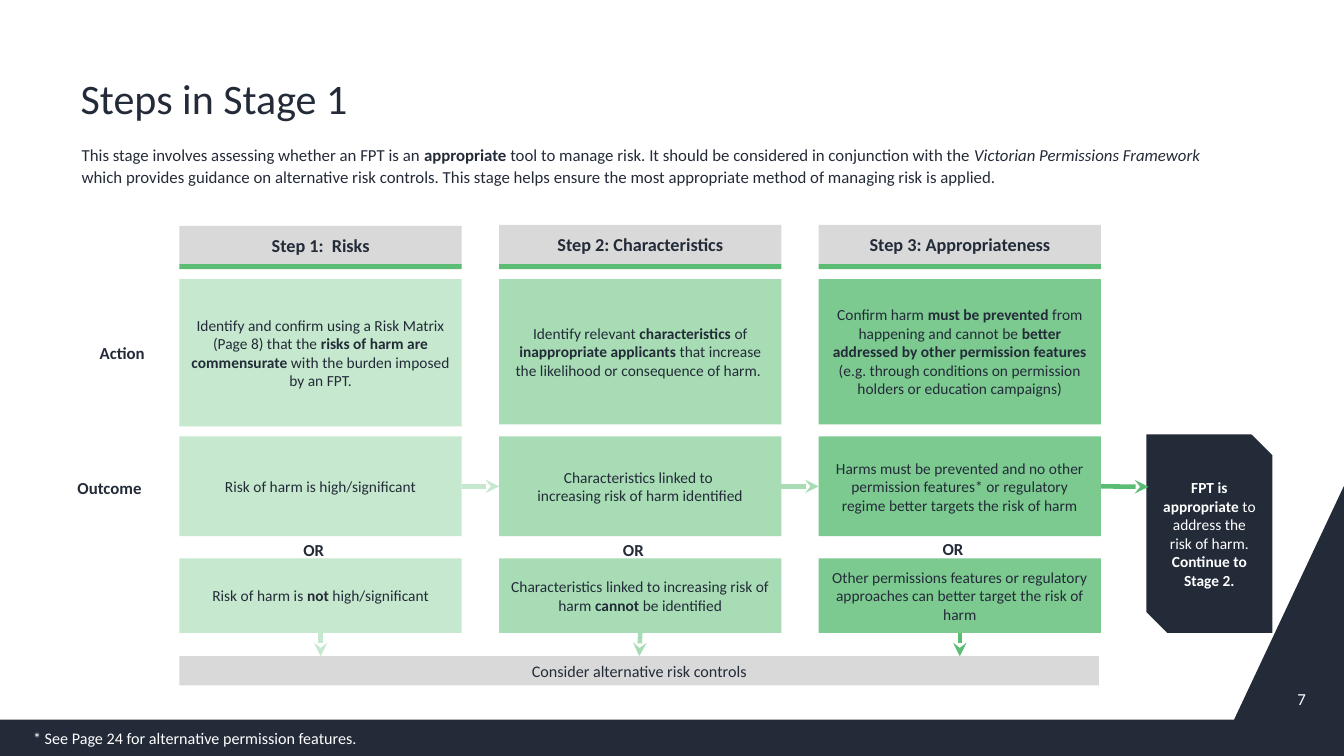
from lxml import etree
from pptx import Presentation
from pptx.dml.color import RGBColor
from pptx.enum.shapes import MSO_CONNECTOR, MSO_SHAPE
from pptx.enum.text import MSO_ANCHOR, MSO_AUTO_SIZE, PP_ALIGN
from pptx.oxml.ns import qn
from pptx.util import Inches, Pt

FONT = "Calibri"
COLORS = {
    "navy": "232B39", "white": "FFFFFF", "grey": "D9D9D9", "green": "5BBD74",
    "pale": "C6E8CE", "light": "A7DCB4", "medium": "7CCA90",
}
COLUMN_LEFT, COLUMN_PITCH, COLUMN_WIDTH = 1.78, 3.17, 2.8
ACTION_TOP, OUTCOME_TOP, ALTERNATIVE_TOP = 2.77, 4.33, 5.54

# Text is a list of spans; a span is (words, style), style "b" or "i" or ""
STEPS = [
    {
        "title": "Step 1:  Risks", "title_top": 2.24, "or_top": 5.31,
        "fill": "pale", "arrow": "pale", "action_height": 1.46,
        "action": [("Identify and confirm using a Risk Matrix (Page 8) that the ", ""),
                   ("risks of harm are commensurate ", "b"),
                   ("with the burden imposed by an FPT.", "")],
        "outcome": [("Risk of harm is high/significant", "")],
        "alternative": [("Risk of harm is ", ""), ("not", "b"), (" high/significant", "")],
    },
    {
        "title": "Step 2: Characteristics", "title_top": 2.23, "or_top": 5.31,
        "fill": "light", "arrow": "light", "action_height": 1.44,
        "action": [("Identify relevant ", ""), ("characteristics", "b"), (" of ", ""),
                   ("inappropriate applicants", "b"),
                   (" that increase the likelihood or consequence of harm. ", "")],
        "outcome": [("Characteristics linked to \nincreasing risk of harm identified", "")],
        "alternative": [("Characteristics linked to increasing risk of harm ", ""),
                        ("cannot ", "b"), ("be identified", "")],
    },
    {
        "title": "Step 3: Appropriateness", "title_top": 2.23, "or_top": 5.3,
        "fill": "medium", "arrow": "green", "action_height": 1.44,
        "action": [("Confirm harm ", ""), ("must be prevented ", "b"),
                   ("from happening and cannot be ", ""),
                   ("better addressed by other permission features ", "b"),
                   ("(e.g. through conditions on permission holders or education campaigns)", "")],
        "outcome": [("Harms must be prevented and no other permission features* or "
                     "regulatory regime better targets the risk of harm", "")],
        "alternative": [("Other permissions features or regulatory approaches can better "
                         "target the risk of harm", "")],
    },
]
INTRO = [
    ("This stage involves assessing whether an FPT is an ", ""), ("appropriate ", "b"),
    ("tool to manage risk. It should be considered in conjunction with the ", ""),
    ("Victorian Permissions Framework ", "i"),
    ("which provides guidance on alternative risk controls. This stage helps ensure "
     "the most appropriate method of managing risk is applied.", ""),
]
RESULT = [("FPT is appropriate ", "b"), ("to address the risk of harm. ", ""),
          ("Continue to Stage 2.", "b")]


def color(name):
    return RGBColor.from_string(COLORS[name])


def write(shape, spans, size, ink="navy", align=PP_ALIGN.LEFT, anchor=MSO_ANCHOR.TOP,
          margins=(0.1, 0.05), wrap=True):
    frame = shape.text_frame
    frame.word_wrap = wrap
    frame.auto_size = MSO_AUTO_SIZE.NONE
    frame.vertical_anchor = anchor
    frame.margin_left = frame.margin_right = Inches(margins[0])
    frame.margin_top = frame.margin_bottom = Inches(margins[1])
    para = frame.paragraphs[0]
    para.alignment = align
    para.font.name = FONT
    para.font.size = Pt(size)
    para.font.color.rgb = color(ink)
    for words, style in spans:
        for number, line in enumerate(words.split("\n")):
            if number:
                para.add_line_break()
            span = para.add_run()
            span.text = line
            if style == "b":
                span.font.bold = True
            elif style == "i":
                span.font.italic = True
    return para


def place(shape, left, top, width, height):
    shape.left, shape.top = Inches(left), Inches(top)
    shape.width, shape.height = Inches(width), Inches(height)


def paint(shape, fill):
    shape.shadow.inherit = False
    shape.fill.solid()
    shape.fill.fore_color.rgb = color(fill)
    shape.line.fill.background()


def add_box(page, left, top, width, height, fill, kind=MSO_SHAPE.RECTANGLE):
    box = page.shapes.add_shape(kind, Inches(left), Inches(top), Inches(width), Inches(height))
    paint(box, fill)
    return box


def add_text_box(page, left, top, width, height, text, size, style="", **layout):
    box = page.shapes.add_textbox(Inches(left), Inches(top), Inches(width), Inches(height))
    write(box, [(text, style)], size, **layout)


def add_card(page, left, top, width, height, fill, spans, space_after=6, **layout):
    card = add_box(page, left, top, width, height, fill)
    para = write(card, spans, 11, align=PP_ALIGN.CENTER, anchor=MSO_ANCHOR.MIDDLE,
                 margins=(0.1, 0), **layout)
    para.space_after = Pt(space_after)
    return card


def add_arrow(page, start, end, ink):
    arrow = page.shapes.add_connector(MSO_CONNECTOR.STRAIGHT, *map(Inches, start + end))
    arrow.line.color.rgb = color(ink)
    arrow.line.width = Pt(3.25)
    etree.SubElement(arrow.line._get_or_add_ln(), qn("a:tailEnd"), type="stealth")
    etree.SubElement(arrow._element.spPr, qn("a:effectLst"))
    return arrow


def add_band(page):
    points = [(12.24, 7.14), (0, 7.14), (0, 7.5), (13.33, 7.5), (13.33, 4.82)]
    corners = [(Inches(x), Inches(y)) for x, y in points]
    builder = page.shapes.build_freeform(*corners[0], scale=1.0)
    builder.add_line_segments(corners[1:], close=True)
    paint(builder.convert_to_shape(), "navy")


def add_heading(page):
    title, body = page.shapes.title, page.placeholders[1]
    place(title, 0.76, 0.15, 11.5, 1.13)
    para = write(title, [("Steps in Stage 1", "")], 30, anchor=MSO_ANCHOR.BOTTOM,
                 margins=(0.04, 0.05))
    para.line_spacing = 0.9
    place(body, 0.77, 1.38, 11.41, 0.75)
    para = write(body, INTRO, 12, margins=(0.04, 0.05))
    para.line_spacing = 1.05
    para.space_before = Pt(6)
    properties = para._p.get_or_add_pPr()
    properties.set("marL", "0")
    properties.set("indent", "0")
    bullet = etree.Element(qn("a:buNone"))
    properties.find(qn("a:defRPr")).addprevious(bullet)


def add_step(page, number, step):
    left = COLUMN_LEFT + number * COLUMN_PITCH
    header = add_box(page, left, step["title_top"], COLUMN_WIDTH, 0.39, "grey")
    write(header, [(step["title"], "b")], 13, align=PP_ALIGN.CENTER, anchor=MSO_ANCHOR.MIDDLE)
    add_box(page, left, 2.62, COLUMN_WIDTH, 0.05, "green")
    add_card(page, left, ACTION_TOP, COLUMN_WIDTH, step["action_height"], step["fill"],
             step["action"], space_after=3)
    outcome = add_card(page, left, OUTCOME_TOP, COLUMN_WIDTH, 0.99, step["fill"], step["outcome"])
    alternative = add_card(page, left, ALTERNATIVE_TOP, COLUMN_WIDTH, 0.74, step["fill"],
                           step["alternative"])
    add_text_box(page, left + 1.13, step["or_top"], 0.55, 0.3, "OR", 12, "b")
    return outcome, alternative


def add_arrows(page, cards, bar):
    for number, (step, (outcome, alternative)) in enumerate(zip(STEPS, cards)):
        left = COLUMN_LEFT + number * COLUMN_PITCH
        right, middle = left + COLUMN_WIDTH, left + COLUMN_WIDTH / 2
        last = number == len(STEPS) - 1
        tip = 11.39 if last else left + COLUMN_PITCH
        across = add_arrow(page, (right, 4.83), (tip, 4.83), step["arrow"])
        across.begin_connect(outcome, 3)
        if not last:
            across.end_connect(cards[number + 1][0], 1)
        down = add_arrow(page, (middle, 6.28), (middle, 6.51), step["arrow"])
        down.begin_connect(alternative, 2)
        if number == 1:  # only the centre column meets the middle of the bar
            down.end_connect(bar, 0)


def main():
    deck = Presentation()
    deck.slide_width, deck.slide_height = Inches(13.33), Inches(7.5)
    page = deck.slides.add_slide(deck.slide_layouts[1])

    # Footer band, footnote and page number
    add_band(page)
    add_text_box(page, 0.23, 7.18, 5.43, 0.29, "* See Page 24 for alternative permission features.",
                 11.5, ink="white")
    add_text_box(page, 12.57, 6.73, 0.48, 0.4, "7", 12, ink="white", align=PP_ALIGN.RIGHT,
                 anchor=MSO_ANCHOR.MIDDLE)

    # Title and introduction
    add_heading(page)

    # Row labels and step columns
    add_text_box(page, 0.89, 3.35, 0.74, 0.3, "Action", 12, "b", wrap=False)
    add_text_box(page, 0.67, 4.69, 0.96, 0.3, "Outcome", 12, "b", wrap=False)
    cards = [add_step(page, number, step) for number, step in enumerate(STEPS)]

    # Fallback bar and final result
    bar = add_box(page, COLUMN_LEFT, 6.51, 9.12, 0.29, "grey")
    write(bar, [("Consider alternative risk controls", "")], 11.5, align=PP_ALIGN.CENTER,
          anchor=MSO_ANCHOR.MIDDLE)
    result = add_box(page, 11.37, 4.31, 1.25, 1.97, "navy", MSO_SHAPE.SNIP_2_DIAG_RECTANGLE)
    para = write(result, RESULT, 11, ink="white", align=PP_ALIGN.CENTER,
                 anchor=MSO_ANCHOR.MIDDLE, margins=(0.04, 0))
    para.space_after = Pt(6)

    add_arrows(page, cards, bar)
    deck.save("out.pptx")


if __name__ == "__main__":
    main()
